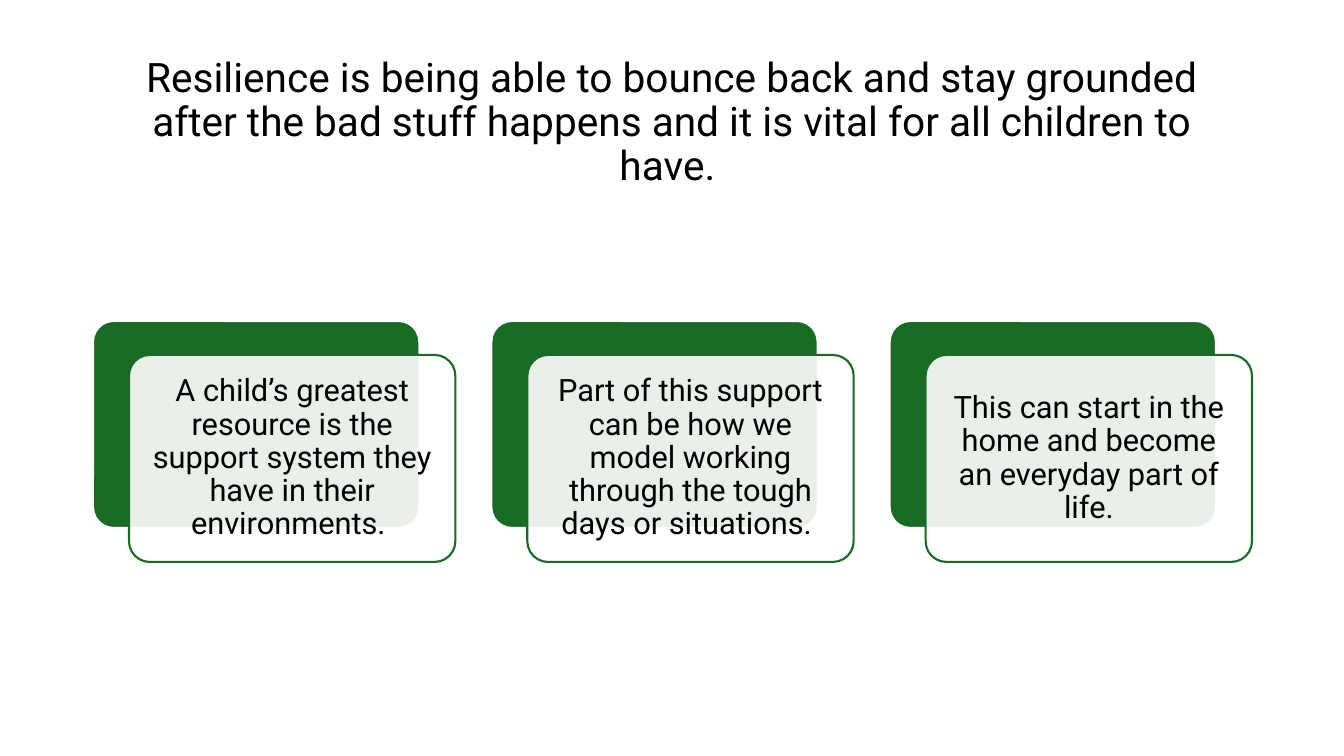
from dataclasses import dataclass

from lxml.etree import SubElement
from pptx import Presentation
from pptx.dml.color import RGBColor
from pptx.enum.shapes import MSO_SHAPE as Shape
from pptx.enum.text import MSO_ANCHOR as Anchor, PP_ALIGN as Align
from pptx.oxml.ns import qn
from pptx.util import Emu, Pt


@dataclass(frozen=True)
class Theme:
    font: str = "Roboto"
    ink: str = "000000"
    paper: str = "FFFFFF"
    green: str = "196B24"
    title_size: int = 29
    card_size: int = 22
    outline: float = 1.5
    line_spacing: float = 0.9
    corner: float = 0.1
    panel_opacity: int = 90


THEME = Theme()
EMU_PER_PX = 914400 / 100.8
TITLE = (
    "Resilience is being able to bounce back and stay grounded "
    "after the bad stuff happens and it is vital for all children to have. "
)
CARDS = (
    "A child’s greatest resource is the support system they have in their environments. ",
    "Part of this support can be how we model working through the tough days or situations. ",
    "This can start in the home and become an everyday part of life.",
)


def px(length):
    return Emu(round(length * EMU_PER_PX))


def add_text(page, box, text, size):
    holder = page.shapes.add_textbox(*map(px, box))
    frame = holder.text_frame
    frame.word_wrap = True
    frame.vertical_anchor = Anchor.MIDDLE
    frame.margin_left = frame.margin_right = px(10)
    frame.margin_top = frame.margin_bottom = px(5)
    para = frame.paragraphs[0]
    para.alignment = Align.CENTER
    para.line_spacing = THEME.line_spacing
    span = para.add_run()
    span.text = text
    span.font.name = THEME.font
    span.font.size = Pt(size)
    span.font.color.rgb = RGBColor.from_string(THEME.ink)


def add_panel(page, box, fill, line, opacity=100):
    panel = page.shapes.add_shape(Shape.ROUNDED_RECTANGLE, *map(px, box))
    panel.shadow.inherit = False
    panel.adjustments[0] = THEME.corner
    panel.fill.solid()
    panel.fill.fore_color.rgb = RGBColor.from_string(fill)
    panel.line.color.rgb = RGBColor.from_string(line)
    panel.line.width = Pt(THEME.outline)
    if opacity < 100:
        color = panel.fill._xPr.find(qn("a:solidFill"))[0]
        SubElement(color, qn("a:alpha")).set("val", str(opacity * 1000))


def add_title(page, box):
    add_text(page, box, TITLE, THEME.title_size)


def add_card(page, box, text):
    left, top, width, height = box
    shift_x, shift_y, pad = 36, 34, 6
    panel_width, panel_height = width - shift_x, height - shift_y
    front_left, front_top = left + shift_x, top + shift_y
    add_panel(page, (left, top, panel_width, panel_height), THEME.green, THEME.paper)
    add_panel(
        page,
        (front_left, front_top, panel_width, panel_height),
        THEME.paper,
        THEME.green,
        THEME.panel_opacity,
    )
    text_box = (
        front_left + pad,
        front_top + pad,
        panel_width - 2 * pad,
        panel_height - 2 * pad,
    )
    add_text(page, text_box, text, THEME.card_size)


def add_card_row(page, box):
    left, top, width, height = box
    gap = 36
    card_width = (width - gap * (len(CARDS) - 1)) / len(CARDS)
    for index, text in enumerate(CARDS):
        card_left = left + index * (card_width + gap)
        add_card(page, (card_left, top, card_width, height), text)


def main():
    deck = Presentation()
    deck.slide_width, deck.slide_height = px(1344), px(756)
    page = deck.slides.add_slide(deck.slide_layouts[6])
    add_title(page, (93, 61, 1159, 125))
    add_card_row(page, (93, 321, 1159, 241))
    deck.save("out.pptx")


if __name__ == "__main__":
    main()
